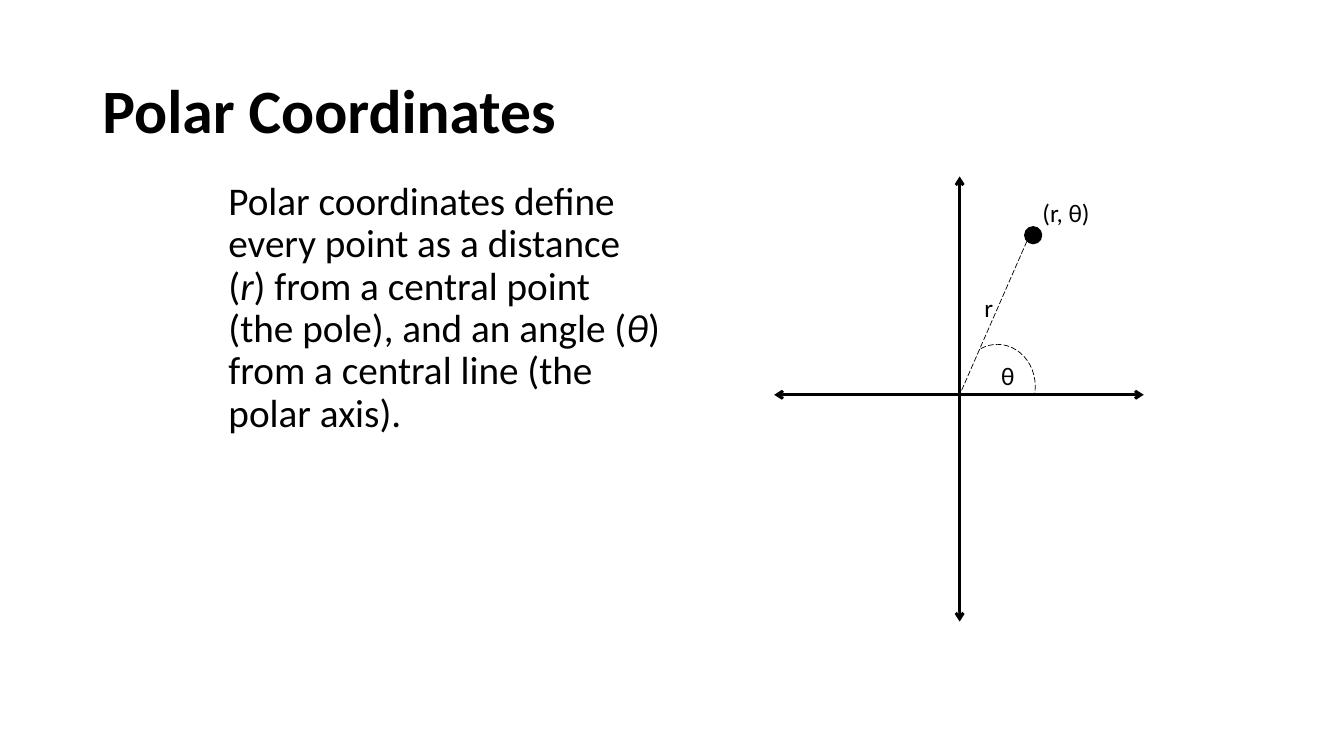
"""Build a slide that explains polar coordinates with a labelled diagram."""
from dataclasses import dataclass

from lxml.etree import SubElement
from pptx import Presentation
from pptx.dml.color import RGBColor
from pptx.enum.dml import MSO_LINE_DASH_STYLE as Dash
from pptx.enum.shapes import MSO_CONNECTOR as Connector, MSO_SHAPE as Preset
from pptx.enum.text import MSO_ANCHOR as Anchor, MSO_AUTO_SIZE as AutoSize, PP_ALIGN as Align
from pptx.oxml.ns import qn
from pptx.util import Pt

COLOURS = {"ink": "000000", "paper": "FFFFFF"}
FONT = "Calibri"
POLE_X, POLE_Y = 685.5, 282
DOT_X, DOT_TOP, DOT_SIZE = 738, 162, 12
ARC_WIDTH, ARC_HEIGHT = 54, 60
ARC_START, ARC_END = 246.1, 12.42
ARC_UNITS_PER_DEGREE = 0.6


@dataclass(frozen=True)
class Segment:
    x1: float
    y1: float
    x2: float
    y2: float
    weight: float = 2
    arrows: bool = True
    dashed: bool = False


@dataclass(frozen=True)
class Label:
    text: str
    left: float
    top: float
    width: float
    height: float = 29


SEGMENTS = (
    Segment(POLE_X, 126, POLE_X, 444),
    Segment(553, POLE_Y, 817, POLE_Y),
    Segment(DOT_X, DOT_TOP, POLE_X, POLE_Y, weight=0.5, arrows=False, dashed=True),
)
LABELS = (
    Label("(r, θ)", 737.5, 137.5, 49),
    Label("r", 696, 205, 21),
    Label("θ", 708, 254, 24.5),
)
DEFINITION = (
    "Polar coordinates define every point as a distance (*r*) from a central point "
    "(the pole), and an angle (*θ*) from a central line (the polar axis)."
)


def colour(name: str) -> RGBColor:
    return RGBColor.from_string(COLOURS[name])


def write_text(frame, text: str, *, size: float, bold: bool = False, wrap: bool = True,
               anchor=Anchor.TOP, autosize=AutoSize.NONE, spacing: float = 1,
               before: float = 0) -> None:
    """Write one paragraph, with the parts between asterisks in italics."""
    frame.word_wrap = wrap
    frame.auto_size = autosize
    frame.vertical_anchor = anchor
    paragraph = frame.paragraphs[0]
    paragraph.alignment = Align.LEFT
    paragraph.line_spacing = spacing
    paragraph.space_before = Pt(before)
    for index, part in enumerate(text.split("*")):
        run = paragraph.add_run()
        run.text = part
        run.font.name = FONT
        run.font.size = Pt(size)
        run.font.bold = bold
        run.font.italic = index % 2 == 1
        run.font.color.rgb = colour("ink")


def place(shape, left: float, top: float, width: float, height: float) -> None:
    shape.left, shape.top = Pt(left), Pt(top)
    shape.width, shape.height = Pt(width), Pt(height)


def remove_bullet(paragraph) -> None:
    properties = paragraph._p.get_or_add_pPr()
    properties.set("marL", "0")
    properties.set("indent", "0")
    SubElement(properties, qn("a:buNone"))


def style_line(line, weight: float, dashed: bool = False) -> None:
    line.color.rgb = colour("ink")
    line.width = Pt(weight)
    if dashed:
        line.dash_style = Dash.LONG_DASH


def draw_segment(slide, segment: Segment) -> None:
    connector = slide.shapes.add_connector(
        Connector.STRAIGHT, Pt(segment.x1), Pt(segment.y1), Pt(segment.x2), Pt(segment.y2))
    style_line(connector.line, segment.weight, segment.dashed)
    if segment.arrows:
        for end in ("a:headEnd", "a:tailEnd"):
            SubElement(connector.line._get_or_add_ln(), qn(end), type="arrow")
    SubElement(connector._element.spPr, qn("a:effectLst"))


def draw_point(slide) -> None:
    dot = slide.shapes.add_shape(
        Preset.OVAL, Pt(DOT_X - DOT_SIZE / 2), Pt(DOT_TOP), Pt(DOT_SIZE), Pt(DOT_SIZE))
    dot.shadow.inherit = False
    dot.fill.solid()
    dot.fill.fore_color.rgb = colour("ink")
    style_line(dot.line, 1)


def draw_angle(slide) -> None:
    angle = slide.shapes.add_shape(
        Preset.ARC, Pt(POLE_X), Pt(POLE_Y - 36), Pt(ARC_WIDTH), Pt(ARC_HEIGHT))
    angle.shadow.inherit = False
    angle.fill.background()
    for index, degrees in enumerate((ARC_START, ARC_END)):
        angle.adjustments[index] = degrees * ARC_UNITS_PER_DEGREE
    style_line(angle.line, 0.5, dashed=True)


def draw_label(slide, label: Label) -> None:
    box = slide.shapes.add_textbox(
        Pt(label.left), Pt(label.top), Pt(label.width), Pt(label.height))
    write_text(box.text_frame, label.text, size=18, wrap=False,
               autosize=AutoSize.SHAPE_TO_FIT_TEXT)


def main() -> None:
    deck = Presentation()
    deck.slide_width, deck.slide_height = Pt(960), Pt(540)
    slide = deck.slides.add_slide(deck.slide_layouts[1])
    slide.background.fill.solid()
    slide.background.fill.fore_color.rgb = colour("paper")

    title, definition = slide.placeholders
    place(title, 66, 28.8, 828, 104.4)
    write_text(title.text_frame, "Polar Coordinates", size=44, bold=True,
               anchor=Anchor.MIDDLE, spacing=0.9)
    place(definition, 156, 126, 324, 356.4)
    write_text(definition.text_frame, DEFINITION, size=28, spacing=0.9, before=10)
    remove_bullet(definition.text_frame.paragraphs[0])

    for segment in SEGMENTS:
        draw_segment(slide, segment)
    draw_point(slide)
    draw_angle(slide)
    for label in LABELS:
        draw_label(slide, label)
    deck.save("out.pptx")


if __name__ == "__main__":
    main()
